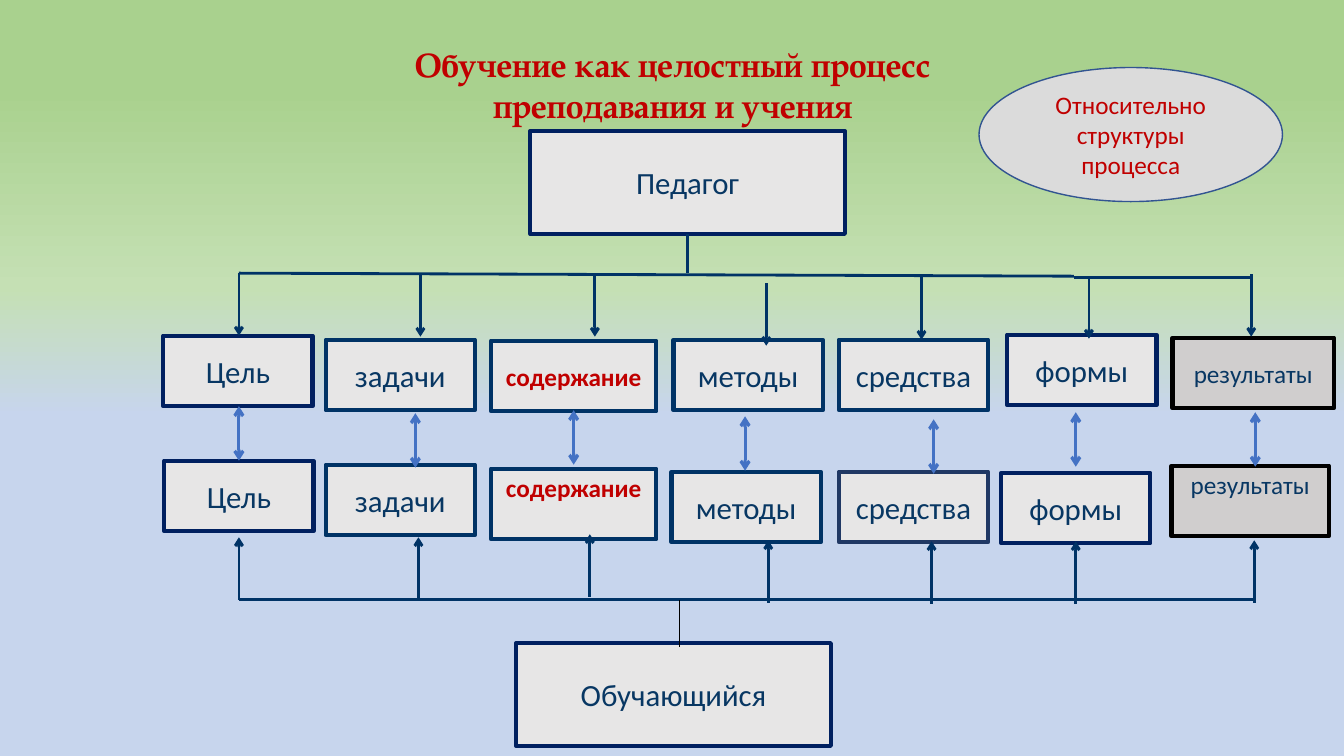
from lxml import etree
from pptx import Presentation
from pptx.dml.color import RGBColor
from pptx.enum.shapes import MSO_CONNECTOR, MSO_SHAPE
from pptx.enum.text import MSO_ANCHOR, PP_ALIGN
from pptx.oxml.ns import qn
from pptx.util import Inches, Pt

COLORS = {
    "red": "C00000", "text": "083763", "navy": "002060", "teal": "003366",
    "slate": "203864", "black": "000000", "blue": "4472C4", "oval line": "325491",
    "box": "E7E6E6", "result": "D0CECE", "oval": "DBDBDB",
}
GRADIENT = [(0, "A9D18E"), (12, "A9D18E"), (38, "C5E0B4"), (55, "C7D5ED")]

deck = Presentation()
deck.slide_width, deck.slide_height = Inches(13.33), Inches(7.5)
page = deck.slides.add_slide(deck.slide_layouts[6])

background = page.background.fill
background.gradient()
background.gradient_angle = 270
stops = page._element.find(".//" + qn("a:gsLst"))
for stop in list(stops):
    stops.remove(stop)
for position, color in GRADIENT:
    stop = etree.SubElement(stops, qn("a:gs"), pos=str(position * 1000))
    etree.SubElement(stop, qn("a:srgbClr"), val=color)


def add_box(text, place, line, fill="box", size=22, color="text", bold=False,
            kind=MSO_SHAPE.RECTANGLE, weight=3, anchor=MSO_ANCHOR.MIDDLE):
    box = page.shapes.add_shape(kind, *[Inches(value) for value in place])
    box.shadow.inherit = False
    box.fill.solid()
    box.fill.fore_color.rgb = RGBColor.from_string(COLORS[fill])
    box.line.color.rgb = RGBColor.from_string(COLORS[line])
    box.line.width = Pt(weight)
    frame = box.text_frame
    frame.word_wrap = True
    frame.vertical_anchor = anchor
    frame.margin_top = frame.margin_bottom = Inches(0.04)
    para = frame.paragraphs[0]
    para.alignment = PP_ALIGN.CENTER
    span = para.add_run()
    span.text = text
    span.font.name, span.font.size, span.font.bold = "Calibri", Pt(size), bold
    span.font.color.rgb = RGBColor.from_string(COLORS[color])


def add_line(start, end, color="teal", weight=2, arrows=()):
    points = [Inches(value) for value in (*start, *end)]
    line = page.shapes.add_connector(MSO_CONNECTOR.STRAIGHT, *points)
    line.line.color.rgb = RGBColor.from_string(COLORS[color])
    line.line.width = Pt(weight)
    outline = line.line._get_or_add_ln()
    for arrow in arrows:
        etree.SubElement(outline, qn("a:" + arrow), type="arrow")
    etree.SubElement(line._element.spPr, qn("a:effectLst"))


title = page.shapes.add_textbox(Inches(1.98), Inches(0.39), Inches(9.38), Inches(0.91))
title.text_frame.word_wrap = True
for number, text in enumerate(["Обучение как целостный процесс", "преподавания и учения"]):
    para = title.text_frame.add_paragraph() if number else title.text_frame.paragraphs[0]
    para.alignment = PP_ALIGN.CENTER
    span = para.add_run()
    span.text = text
    span.font.name, span.font.size, span.font.bold = "TeX Gyre Pagella", Pt(24), True
    span.font.color.rgb = RGBColor.from_string(COLORS["red"])

add_box("Педагог", (5.26, 1.3, 3.12, 1.02), "navy")
add_box("Обучающийся", (5.12, 6.38, 3.12, 1.02), "navy")
add_box("Относительно структуры процесса", (9.71, 0.67, 3.01, 1.33), "oval line",
        fill="oval", size=18, color="red", kind=MSO_SHAPE.OVAL, weight=1)

content = {"size": 18, "color": "red", "bold": True}
result = {"size": 18, "fill": "result"}
top_anchor = {"anchor": MSO_ANCHOR.TOP}
stages = [
    ("Цель", (1.62, 3.33, 1.48), (1.63, 4.57, 1.48), "navy", "navy", {}, {}),
    ("задачи", (3.23, 3.37, 1.48), (3.23, 4.61, 1.48), "teal", "teal", {}, {}),
    ("содержание", (4.87, 3.38, 1.64), (4.87, 4.65, 1.64), "teal", "teal", content, top_anchor),
    ("методы", (6.68, 3.37, 1.48), (6.66, 4.68, 1.48), "teal", "teal", {}, {}),
    ("средства", (8.32, 3.37, 1.48), (8.32, 4.68, 1.48), "teal", "slate", {}, {}),
    ("формы", (9.99, 3.32, 1.48), (9.93, 4.69, 1.48), "navy", "navy", {}, {}),
    ("результаты", (11.63, 3.35, 1.6), (11.62, 4.62, 1.56), "black", "black", result, top_anchor),
]
for text, upper, lower, upper_line, lower_line, style, lower_style in stages:
    add_box(text, (*upper, 0.7), upper_line, **style)
    add_box(text, (*lower, 0.7), lower_line, **style, **lower_style)

add_line((2.37, 2.71), (10.65, 2.74))
add_line((10.65, 2.75), (12.43, 2.75))
add_line((6.82, 2.32), (6.82, 2.71))
add_line((2.37, 5.95), (12.43, 5.95))
add_line((6.74, 6.42), (6.74, 5.95), "black", 1)

teacher_arrows = [(2.37, 2.71), (4.17, 2.72), (5.9, 2.72), (7.6, 2.81),
                  (9.14, 2.75), (10.8, 2.74), (12.41, 2.72)]
learner_arrows = [(2.37, 5.95), (4.15, 5.95), (5.85, 5.92), (7.62, 5.98),
                  (9.24, 5.99), (10.67, 5.99), (12.44, 5.98)]
exchange_arrows = [(2.37, 4.03), (4.12, 4.1), (5.69, 4.07), (7.39, 4.13),
                   (9.26, 4.16), (10.67, 4.09), (12.45, 4.09)]
for x, y in teacher_arrows:
    add_line((x, y), (x, y + 0.62), arrows=["tailEnd"])
for x, y in learner_arrows:
    add_line((x, y), (x, y - 0.62), arrows=["tailEnd"])
for x, y in exchange_arrows:
    add_line((x, y), (x, y + 0.54), "blue", 2.25, ["headEnd", "tailEnd"])

deck.save("out.pptx")
